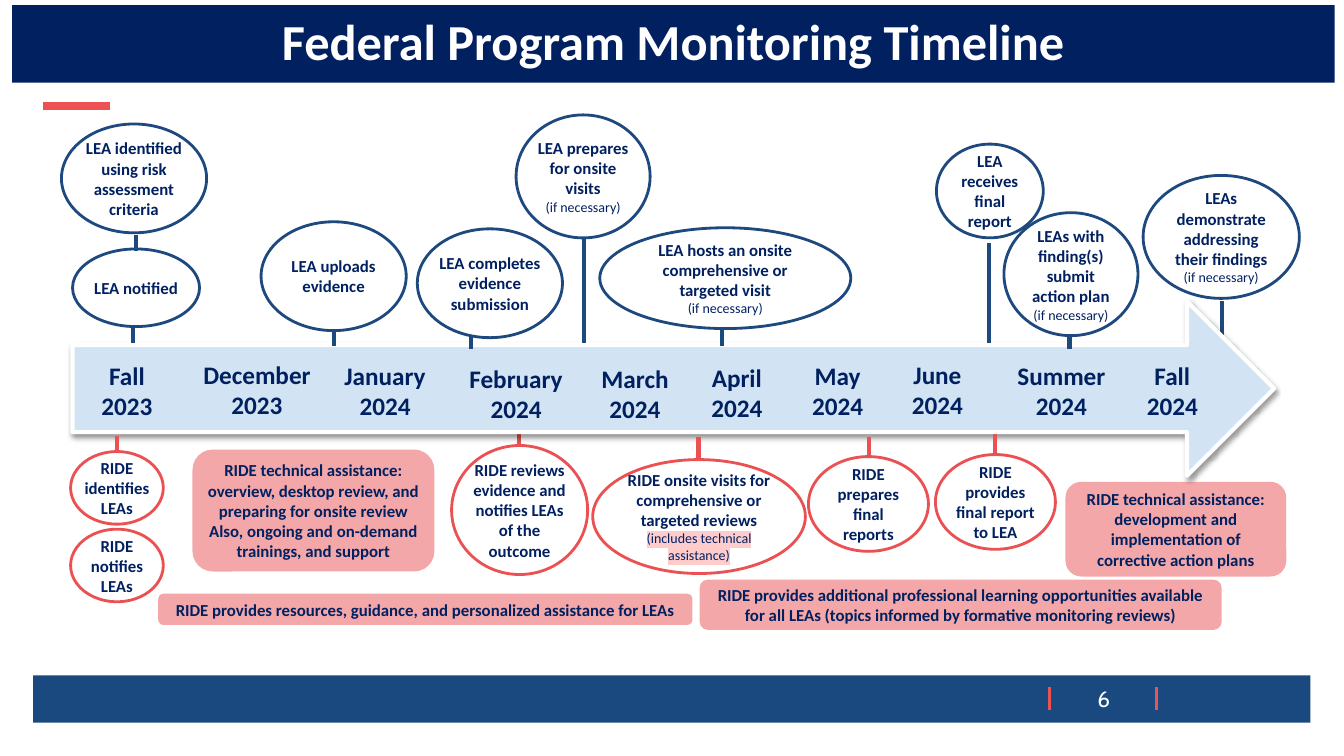
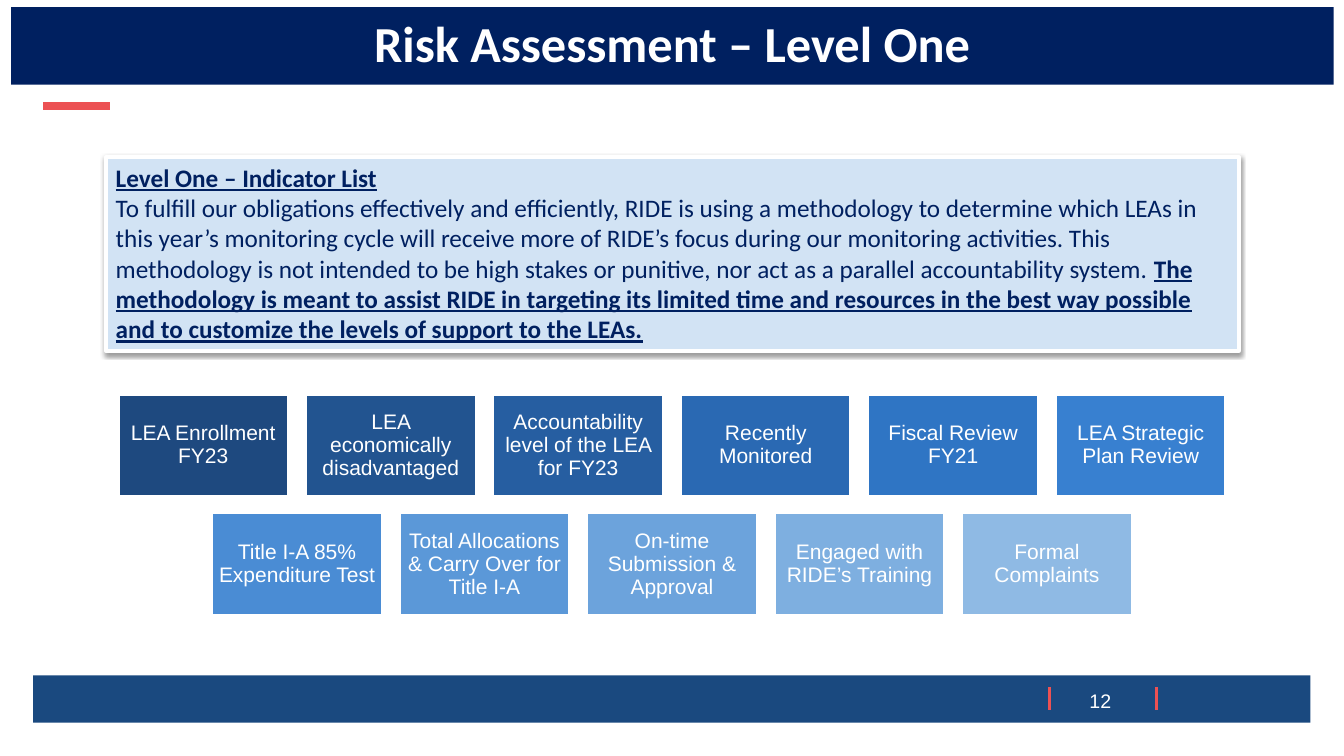
import lxml.etree
import pptx
import pptx.dml.color
import pptx.enum.shapes
import pptx.enum.text
import pptx.oxml.ns
import pptx.util


class Theme:
    navy, blue, steel, pale = "002060", "1E497F", "1A497F", "D2E3F4"
    red, dash, rose, white = "EB5152", "EC5153", "FFCCCC", "FFFFFF"
    tiles = ("1E497F 225490 265EA1 2A69B3 2F75C4 3880D0 "
             "4A8CD4 5B98D8 6CA3DC 7EAFE0 8FBAE4").split()
    title = dict(font="Calibri", size=36, color=white, bold=True)
    month = dict(font="Calibri", size=18, color=navy, bold=True)
    label = dict(month, size=12)
    small = dict(label, size=10, bold=False)
    marked = dict(small, mark=rose)
    body = dict(month, bold=False)
    strong = dict(month, under=True)
    tile = dict(font="Arial", size=15, color=white)
    page_one = dict(font="Cabin", size=16, color=white)
    page_two = dict(font="Arial", size=14, color=white)


qn = pptx.oxml.ns.qn
sub = lxml.etree.SubElement
rgb = pptx.dml.color.RGBColor.from_string
kinds = pptx.enum.shapes.MSO_SHAPE
align = pptx.enum.text.PP_ALIGN
anchor = pptx.enum.text.MSO_ANCHOR
cell = pptx.util.Inches(0.1)
wide, high = 133.33, 75


def put(slide, kind, at, paras=(), fill=None, line=None, weight=2, pad=(1, 0.5),
        side=align.CENTER, hold=anchor.MIDDLE, space=None, alpha=None, shade=False):
    area = [round(n * cell) for n in at]
    if kind is None:
        shape = slide.shapes.add_textbox(*area)
    else:
        shape = slide.shapes.add_shape(kind, *area)
        shape.shadow.inherit = False
        shape.fill.solid()
        shape.fill.fore_color.rgb = rgb(fill)
        if line:
            shape.line.color.rgb = rgb(line)
            shape.line.width = pptx.util.Pt(weight)
        else:
            shape.line.fill.background()
    if alpha:
        tint = shape._element.spPr.find(qn("a:solidFill") + "/" + qn("a:srgbClr"))
        sub(tint, qn("a:alpha"), val=str(alpha * 1000))
    if shade:
        glow = sub(shape._element.spPr.find(qn("a:effectLst")), qn("a:outerShdw"),
                   blurRad=str(pptx.util.Pt(3.1)), dist=str(pptx.util.Pt(1.6)),
                   dir="5400000", rotWithShape="0")
        sub(sub(glow, qn("a:srgbClr"), val="000000"), qn("a:alpha"), val="38000")
    frame = shape.text_frame
    frame.word_wrap = True
    frame.vertical_anchor = hold
    frame.margin_left = frame.margin_right = round(pad[0] * cell)
    frame.margin_top = frame.margin_bottom = round(pad[1] * cell)
    for rank, runs in enumerate(paras):
        para = frame.add_paragraph() if rank else frame.paragraphs[0]
        para.alignment = side
        if space:
            para.line_spacing = space
        for text, style in runs:
            run = para.add_run()
            run.text = text
            run.font.size = pptx.util.Pt(style["size"])
            run.font.bold = style.get("bold", False)
            run.font.underline = style.get("under", False)
            run.font.color.rgb = rgb(style["color"])
            run.font.name = style["font"]
            if "mark" in style:
                mark = lxml.etree.Element(qn("a:highlight"))
                sub(mark, qn("a:srgbClr"), val=style["mark"])
                run._r.rPr.find(qn("a:latin")).addprevious(mark)
    return shape


def rule(slide, start, end, color, weight=3):
    ends = [round(n * cell) for n in (*start, *end)]
    link = slide.shapes.add_connector(pptx.enum.shapes.MSO_CONNECTOR.STRAIGHT, *ends)
    link.line.color.rgb = rgb(color)
    link.line.width = pptx.util.Pt(weight)
    sub(link._element.spPr, qn("a:effectLst"))


deck = pptx.Presentation()
deck.slide_width = round(wide * cell)
deck.slide_height = round(high * cell)

heads = [
    ("Federal Program Monitoring Timeline", (1.2, 0.5),
     "6", Theme.page_one, (106.3, 67.5, 6.4, 3.7), align.CENTER),
    ("Risk Assessment – Level One", (1.1, 0.7),
     "12", Theme.page_two, (107.1, 67.8, 5.4, 3.4), align.LEFT),
]
slides = []
for title, spot, page, style, area, side in heads:
    slide = deck.slides.add_slide(deck.slide_layouts[6])
    slides.append(slide)
    rule(slide, (4.3, 10.5), (10.9, 10.5), Theme.dash, 6)
    put(slide, kinds.RECTANGLE, (3.3, 67, 126.7, 4.7), fill=Theme.steel)
    for left in (104.1, 114.7):
        rule(slide, (left, 68.2), (left, 70.4), Theme.dash, 2.25)
    put(slide, kinds.RECTANGLE, (*spot, 131.2, 7.7), [[(title, Theme.title)]],
        fill=Theme.navy, space=0.9)
    put(slide, None, area, [[(page, style)]], side=side)

time, risk = slides

rule(time, (51.5, 42.8), (51.5, 44.2), Theme.red)
rule(time, (121.2, 29.9), (121.2, 34.9), Theme.blue)
put(time, kinds.RIGHT_ARROW, (7.2, 29.9, 119.2, 17.3),
    fill=Theme.pale, line=Theme.white, weight=3, shade=True)

months = [
    ("Fall", "2023", 7.1, 37, 11), ("December", "2023", 19.2, 36.9, 12.6),
    ("January", "2024", 31.9, 37, 12.6), ("February", "2024", 44.9, 37.3, 12.6),
    ("March", "2024", 56.7, 37.3, 12.6), ("April", "2024", 66.8, 37.2, 12.6),
    ("May", "2024", 76.8, 37, 12.6), ("June", "2024", 86.7, 36.9, 12.6),
    ("Summer", "2024", 99.8, 37, 11), ("Fall", "2024", 110.8, 37, 11),
]
for month, year, left, top, width in months:
    put(time, None, (left, top, width, 3.4),
        [[(month, Theme.month)], [(year, Theme.month)]], pad=(0, 0.5))

need = [("(if necessary)", Theme.small)]
help_note = ("(includes technical assistance)", Theme.marked)
ovals = [
    (Theme.blue, [
        ("LEA identified using risk assessment criteria", (6.1, 12.3, 14.4, 10.8), False),
        ("LEA notified", (7.2, 24.7, 12.6, 7.7), False),
        ("LEA uploads evidence", (25.9, 22, 14.4, 10.8), False),
        ("LEA completes evidence submission", (41.4, 22.7, 14.4, 10.8), False),
        ("LEA prepares for onsite visits", (51.2, 11.4, 13.3, 12.2), True),
        ("LEA hosts an onsite comprehensive or targeted visit", (59.5, 22.6, 24.9, 10), True),
        ("LEAs with finding(s) submit action plan", (99.6, 21.1, 13.3, 12.2), True),
        ("LEAs demonstrate addressing their findings", (113.4, 17.4, 15.5, 12.2), True),
        ("LEA receives final report", (92.9, 14.3, 10.6, 9.3), False),
    ]),
    (Theme.red, [
        ("RIDE identifies LEAs", (7, 44.8, 9.2, 7.2), False),
        ("RIDE notifies LEAs", (7, 52.5, 9.2, 7.2), False),
        ("RIDE reviews evidence and notifies LEAs of the outcome",
         (44.8, 44.2, 13.5, 12.8), False),
        ("RIDE prepares final reports", (80.2, 45.3, 11.9, 9.4), False),
        ("RIDE provides final report to LEA", (92.8, 45.1, 11.9, 9.4), False),
    ]),
]
for color, group in ovals:
    for text, area, extra in group:
        paras = [[(text, Theme.label)]] + ([need] if extra else [])
        put(time, kinds.FLOWCHART_CONNECTOR, area, paras,
            fill=Theme.white, line=color, pad=(0, 0))
put(time, kinds.FLOWCHART_CONNECTOR, (58.8, 45.6, 21.1, 11.3),
    [[("RIDE onsite visits for comprehensive or targeted reviews ", Theme.label), help_note]],
    fill=Theme.white, line=Theme.red, pad=(0, 0))

boxes = [
    ((105.7, 47.8, 21.9, 9.4), (1, 0.5),
     ["RIDE technical assistance: development and implementation of corrective action plans"]),
    ((15.7, 58.9, 53, 3.1), (1, 0.5),
     ["RIDE provides resources, guidance, and personalized assistance for LEAs"]),
    ((69.4, 57.5, 51.8, 5), (1, 0.5),
     ["RIDE provides additional professional learning opportunities available "
      "for all LEAs (topics informed by formative monitoring reviews)"]),
    ((19.1, 44.6, 24, 12.1), (0, 0),
     ["RIDE technical assistance: overview, desktop review, and preparing for onsite review",
      "Also, ongoing and on-demand trainings, and support"]),
]
for area, pad, texts in boxes:
    put(time, kinds.ROUNDED_RECTANGLE, area, [[(text, Theme.label)] for text in texts],
        fill=Theme.red, alpha=50, pad=pad)

stems = [
    (Theme.blue, [(33.1, 32.7, 34.3), (13.5, 23.3, 24.9), (13.2, 32.4, 34),
                  (46.7, 33.4, 34.6), (57.9, 23.6, 34), (98.1, 24.1, 34),
                  (71.6, 32.6, 34.3), (106.1, 33.2, 34.6)]),
    (Theme.red, [(69.3, 43.4, 45.6), (86.2, 43.4, 45.1),
                 (98.7, 43.1, 45.1), (11.6, 43.3, 44.8)]),
]
for color, group in stems:
    for left, top, base in group:
        rule(time, (left, top), (left, base), color)

put(risk, kinds.RECTANGLE, (10.5, 15.6, 112.4, 19.2), [
    [("Level One – Indicator List", Theme.strong)],
    [("To fulfill our obligations effectively and efficiently, RIDE is using a methodology "
      "to determine which LEAs in this year’s monitoring cycle will receive more of RIDE’s "
      "focus during our monitoring activities. This methodology is not intended to be high "
      "stakes or punitive, nor act as a parallel accountability system. ", Theme.body),
     ("The methodology is meant to assist RIDE in targeting its limited time and resources "
      "in the best way possible and to customize the levels of support to the LEAs.",
      Theme.strong)],
], fill=Theme.pale, line=Theme.white, weight=3, side=align.LEFT, hold=anchor.TOP, shade=True)

rows = [
    ["LEA Enrollment FY23", "LEA economically disadvantaged",
     "Accountability level of the LEA for FY23", "Recently Monitored",
     "Fiscal Review FY21", "LEA Strategic Plan Review"],
    ["Title I-A 85% Expenditure Test", "Total Allocations & Carry Over for Title I-A",
     "On-time Submission & Approval", "Engaged with RIDE’s Training", "Formal Complaints"],
]
width, height, step, drop = 16.9, 10.2, 18.6, 11.8
fills = iter(Theme.tiles)
for row, texts in enumerate(rows):
    start = (wide - step * (len(texts) - 1) - width) / 2
    for col, text in enumerate(texts):
        put(risk, kinds.RECTANGLE, (start + col * step, 39.1 + row * drop, width, height),
            [[(text, Theme.tile)]], fill=next(fills), line=Theme.white,
            pad=(0.6, 0.6), space=0.9)

deck.save("out.pptx")
